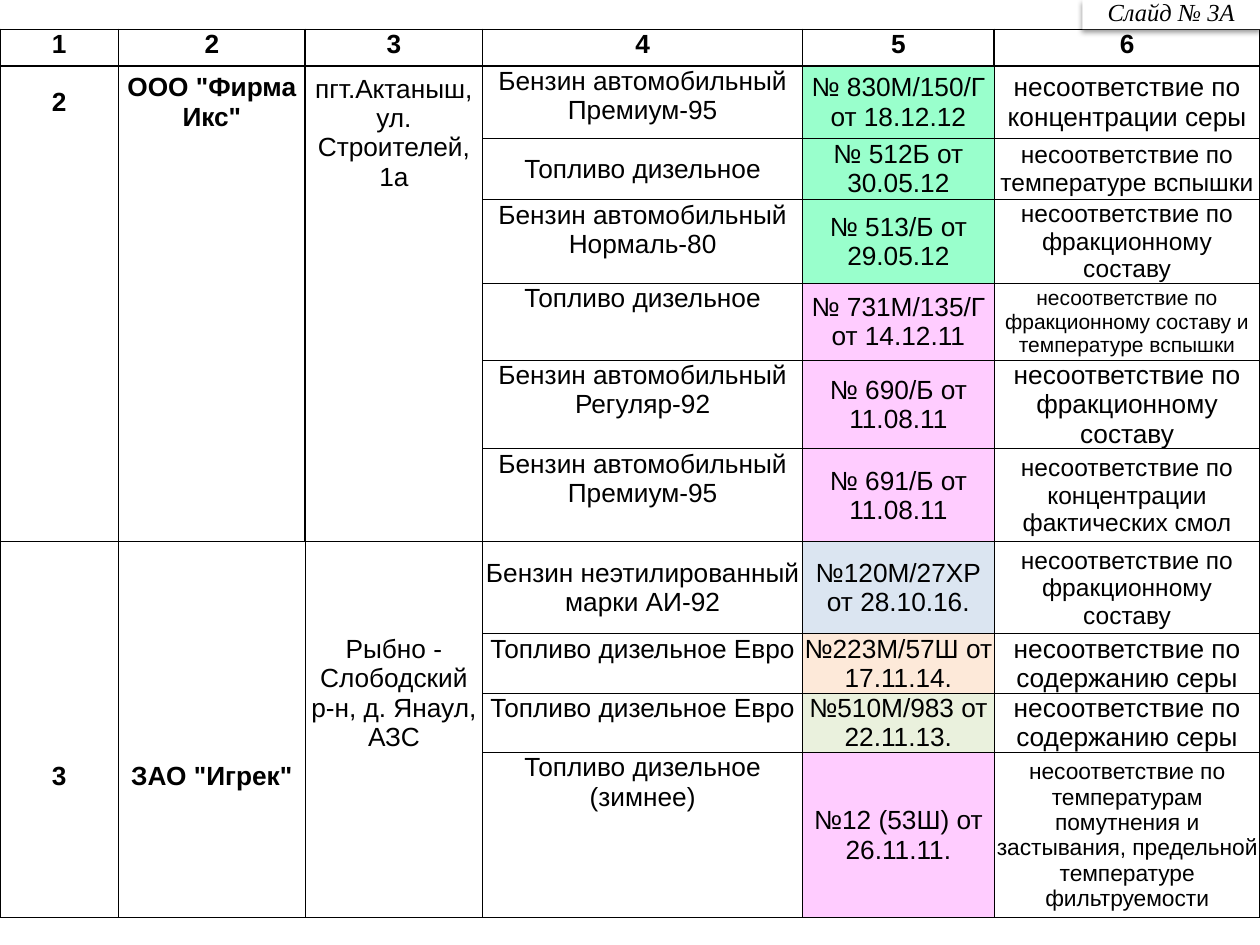
from lxml import etree
from pptx import Presentation
from pptx.dml.color import RGBColor
from pptx.enum.shapes import MSO_SHAPE
from pptx.enum.text import MSO_ANCHOR, PP_ALIGN
from pptx.oxml import parse_xml
from pptx.util import Cm, Pt

CENTER = PP_ALIGN.CENTER
TOP, MIDDLE = MSO_ANCHOR.TOP, MSO_ANCHOR.MIDDLE
RECTANGLE = MSO_SHAPE.RECTANGLE
NAMESPACE = "http://schemas.openxmlformats.org/drawingml/2006/main"
GREEN, PINK, BLUE, ORANGE, LIME = "99FFCC", "FFCCFF", "DBE5F1", "FDE9D9", "EAF1DD"


def color(value):
    return RGBColor.from_string(value)


def add_border(cell, side, weight):
    """Draw one cell edge; a weight of 0 leaves it invisible."""
    fill = '<a:solidFill><a:srgbClr val="000000"/></a:solidFill>' if weight else "<a:noFill/>"
    properties = cell._tc.get_or_add_tcPr()
    properties.append(parse_xml(
        f'<a:ln{side} xmlns:a="{NAMESPACE}" w="{Pt(weight)}">{fill}</a:ln{side}>'))


presentation = Presentation()
presentation.slide_width, presentation.slide_height = Cm(25.4), Cm(19.05)
slide = presentation.slides.add_slide(presentation.slide_layouts[6])

# Table content: fuel, its anchor, protocol, protocol colour, finding, finding size
samples = [
    ("Бензин автомобильный Премиум-95", TOP, "№ 830М/150/Г от 18.12.12", GREEN,
     "несоответствие по концентрации серы", 15),
    ("Топливо дизельное", MIDDLE, "№ 512Б от 30.05.12", GREEN,
     "несоответствие по температуре вспышки", 14),
    ("Бензин автомобильный Нормаль-80", TOP, "№ 513/Б от 29.05.12", GREEN,
     "несоответствие по фракционному составу", 14),
    ("Топливо дизельное", TOP, "№ 731М/135/Г от 14.12.11", PINK,
     "несоответствие по фракционному составу и температуре вспышки", 12),
    ("Бензин автомобильный Регуляр-92", TOP, "№ 690/Б от 11.08.11", PINK,
     "несоответствие по фракционному составу", 15),
    ("Бензин автомобильный Премиум-95", TOP, "№ 691/Б от 11.08.11", PINK,
     "несоответствие по концентрации фактических смол", 14),
    ("Бензин неэтилированный марки АИ-92", MIDDLE, "№120М/27ХР от 28.10.16.", BLUE,
     "несоответствие по фракционному составу", 14),
    ("Топливо дизельное Евро", TOP, "№223М/57Ш от 17.11.14.", ORANGE,
     "несоответствие по содержанию серы", 15),
    ("Топливо дизельное Евро", TOP, "№510М/983 от 22.11.13.", LIME,
     "несоответствие по содержанию серы", 15),
    ("Топливо дизельное (зимнее)", TOP, "№12 (53Ш) от 26.11.11.", PINK,
     "несоответствие по температурам помутнения и застывания, "
     "предельной температуре фильтруемости", 13),
]
companies = {
    1: ("2", 'ООО "Фирма Икс"', "пгт.Актаныш, ул. Строителей, 1а"),
    8: ("3", 'ЗАО "Игрек"', "Рыбно - Слободский р-н, д. Янаул, АЗС"),
}
column_widths = [2.39, 3.76, 3.58, 6.45, 3.86, 5.36]
row_heights = [0.74, 1.45, 1.24, 1.24, 1.55, 1.78, 1.88, 1.85, 0.97, 0.91, 3.33]
block_starts = (0, 1, 7, len(row_heights))

# Table grid
table = slide.shapes.add_table(
    len(row_heights), len(column_widths), Cm(0), Cm(0.59),
    Cm(sum(column_widths)), Cm(sum(row_heights))).table
table.first_row = table.horz_banding = False
for column, width in zip(table.columns, column_widths):
    column.width = Cm(width)
for row, height in zip(table.rows, row_heights):
    row.height = Cm(height)
for top, column, bottom in ((1, 2, 2), (8, 0, 10), (8, 1, 10), (8, 2, 9)):
    table.cell(top, column).merge(table.cell(bottom, column))

# Cells
for r in range(len(row_heights)):
    for c in range(len(column_widths)):
        cell = table.cell(r, c)
        text, size, anchor, fill = "", 15, MIDDLE, None
        if r == 0:
            text, anchor = str(c + 1), TOP
        elif c < 3:
            text = companies[r][c] if r in companies else ""
        else:
            fuel, fuel_anchor, protocol, protocol_color, finding, finding_size = samples[r - 1]
            if c == 3:
                text, anchor = fuel, fuel_anchor
            elif c == 4:
                text, fill = protocol, protocol_color
            else:
                text, size = finding, finding_size

        cell.vertical_anchor = anchor
        cell.margin_left = cell.margin_right = cell.margin_top = Cm(0.02)
        cell.margin_bottom = 0
        paragraph = cell.text_frame.paragraphs[0]
        paragraph.text = text
        paragraph.alignment = CENTER
        paragraph.font.name = "Arial"
        paragraph.font.size = Pt(size)
        paragraph.font.bold = r == 0 or c < 2
        paragraph.font.color.rgb = color("000000")

        # Outer and block edges are thicker; company columns have no inner rows
        for side, edge in (("L", c), ("R", c + 1)):
            thick = r == 0 or edge in (0, 6) or (edge < 3 and r < 7)
            add_border(cell, side, 1 if thick else 0.5)
        last_edge = r + (cell.span_height if cell.is_merge_origin else 1)
        for side, edge in (("T", r), ("B", last_edge)):
            inner = 0 if c < 3 else 0.5
            add_border(cell, side, 1 if edge in block_starts else inner)

        if fill:
            cell.fill.solid()
            cell.fill.fore_color.rgb = color(fill)
        else:
            cell.fill.background()

# Slide number label with a soft shadow
label = slide.shapes.add_shape(RECTANGLE, Cm(21.82), Cm(0), Cm(3.58), Cm(0.59))
label.fill.solid()
label.fill.fore_color.rgb = color("FFFFFF")
label.line.fill.background()
label.shadow.inherit = False
effects = label._element.spPr.find(f"{{{NAMESPACE}}}effectLst")
shadow = etree.SubElement(
    effects, f"{{{NAMESPACE}}}outerShdw", blurRad=str(Pt(3.1)), dist=str(Pt(1.6)),
    dir="5400000", rotWithShape="0")
shadow_color = etree.SubElement(shadow, f"{{{NAMESPACE}}}srgbClr", val="000000")
etree.SubElement(shadow_color, f"{{{NAMESPACE}}}alpha", val="38000")
label.text_frame.word_wrap = True
label.text_frame.vertical_anchor = MIDDLE
paragraph = label.text_frame.paragraphs[0]
paragraph.text = "Слайд № 3А"
paragraph.alignment = CENTER
paragraph.line_spacing = 0.8
paragraph.font.name = "Times New Roman"
paragraph.font.size = Pt(14)
paragraph.font.italic = True
paragraph.font.color.rgb = color("000000")

presentation.save("out.pptx")
